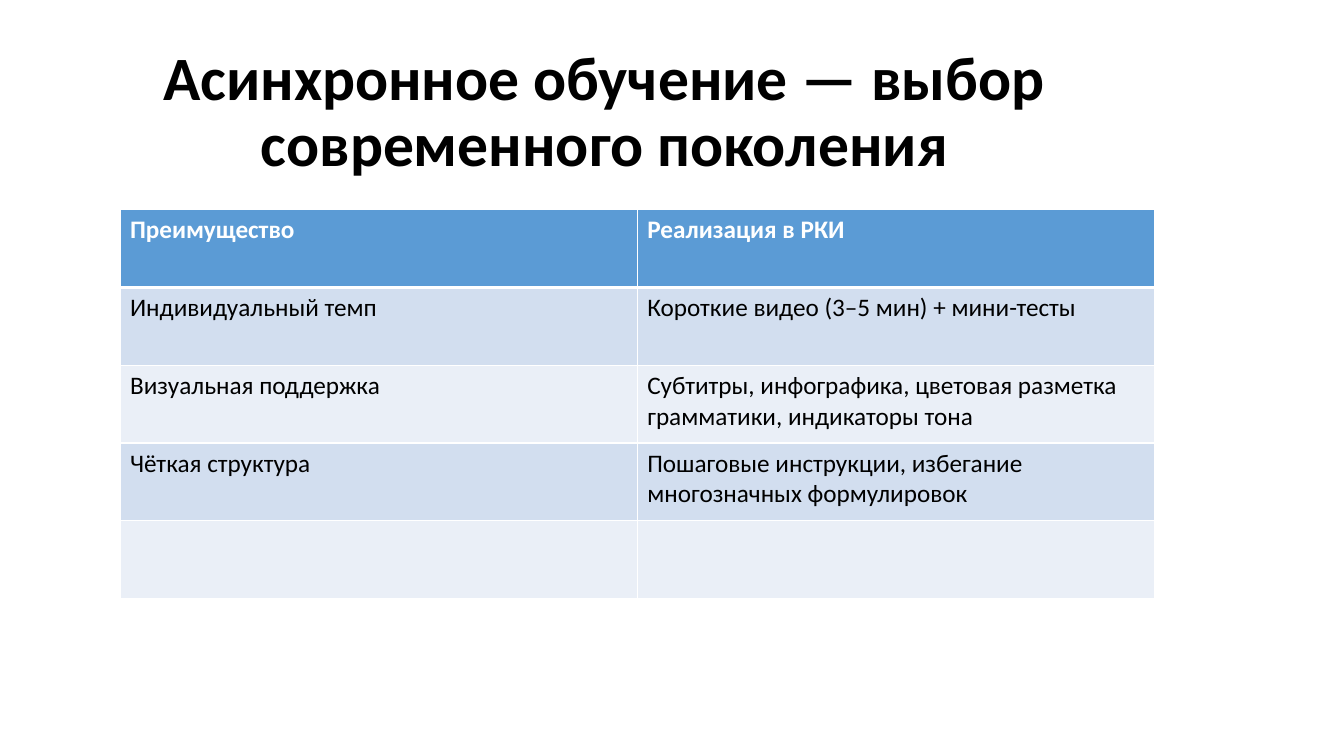
import pptx
import pptx.util
import pptx.dml.color
import pptx.enum.text
import pptx.oxml
import pptx.oxml.ns

Inches, Pt = pptx.util.Inches, pptx.util.Pt
FONT = "Calibri"
WHITE, BLACK, HEADER = "FFFFFF", "000000", "5B9BD5"
BANDS = ("D2DEEF", "EAEFF7")
ROWS = [
    ("Преимущество", "Реализация в РКИ"),
    ("Индивидуальный темп", "Короткие видео (3–5 мин) + мини-тесты"),
    ("Визуальная поддержка",
     "Субтитры, инфографика, цветовая разметка грамматики, индикаторы тона"),
    ("Чёткая структура", "Пошаговые инструкции, избегание многозначных формулировок"),
    ("", ""),
]


def rgb(value):
    return pptx.dml.color.RGBColor.from_string(value)


def set_font(p, size, color, bold):
    p.font.name = FONT
    p.font.size = Pt(size)
    p.font.bold = bold
    p.font.color.rgb = rgb(color)


def set_borders(cell, widths):
    """Draw white borders; widths maps a side (L, R, T, B) to points."""
    tc_pr = cell._tc.get_or_add_tcPr()
    for side, width in widths.items():
        tc_pr.append(pptx.oxml.parse_xml(
            f'<a:ln{side} {pptx.oxml.ns.nsdecls("a")} w="{Pt(width)}">'
            f'<a:solidFill><a:srgbClr val="{WHITE}"/></a:solidFill></a:ln{side}>'))


def add_title(s, left, top, width, height):
    tf = s.shapes.add_textbox(Inches(left), Inches(top), Inches(width), Inches(height)).text_frame
    tf.word_wrap = True
    tf.vertical_anchor = pptx.enum.text.MSO_ANCHOR.MIDDLE
    p = tf.paragraphs[0]
    p.text = "Асинхронное обучение — выбор современного поколения"
    p.alignment = pptx.enum.text.PP_ALIGN.CENTER
    p.line_spacing = 0.9
    set_font(p, 44, BLACK, True)


def add_benefits_table(s, left, top, width, height):
    table = s.shapes.add_table(len(ROWS), len(ROWS[0]), Inches(left), Inches(top),
                               Inches(width), Inches(height)).table
    for i, row in enumerate(ROWS):
        is_header = i == 0
        for j, text in enumerate(row):
            cell = table.cell(i, j)
            # The line under the header is thicker than the rest
            set_borders(cell, {"L": 1, "R": 1, "T": 3 if i == 1 else 1,
                               "B": 3 if is_header else 1})
            cell.fill.solid()
            cell.fill.fore_color.rgb = rgb(HEADER if is_header else BANDS[(i - 1) % 2])
            p = cell.text_frame.paragraphs[0]
            if text:
                p.text = text
            set_font(p, 18, WHITE if is_header else BLACK, is_header)


def main():
    prs = pptx.Presentation()
    prs.slide_width, prs.slide_height = Inches(13.33), Inches(7.5)
    s = prs.slides.add_slide(prs.slide_layouts[6])
    add_title(s, 0.92, 0.4, 10.16, 1.45)
    add_benefits_table(s, 1.19, 2.08, 10.26, 3.86)
    prs.save("out.pptx")


if __name__ == "__main__":
    main()
